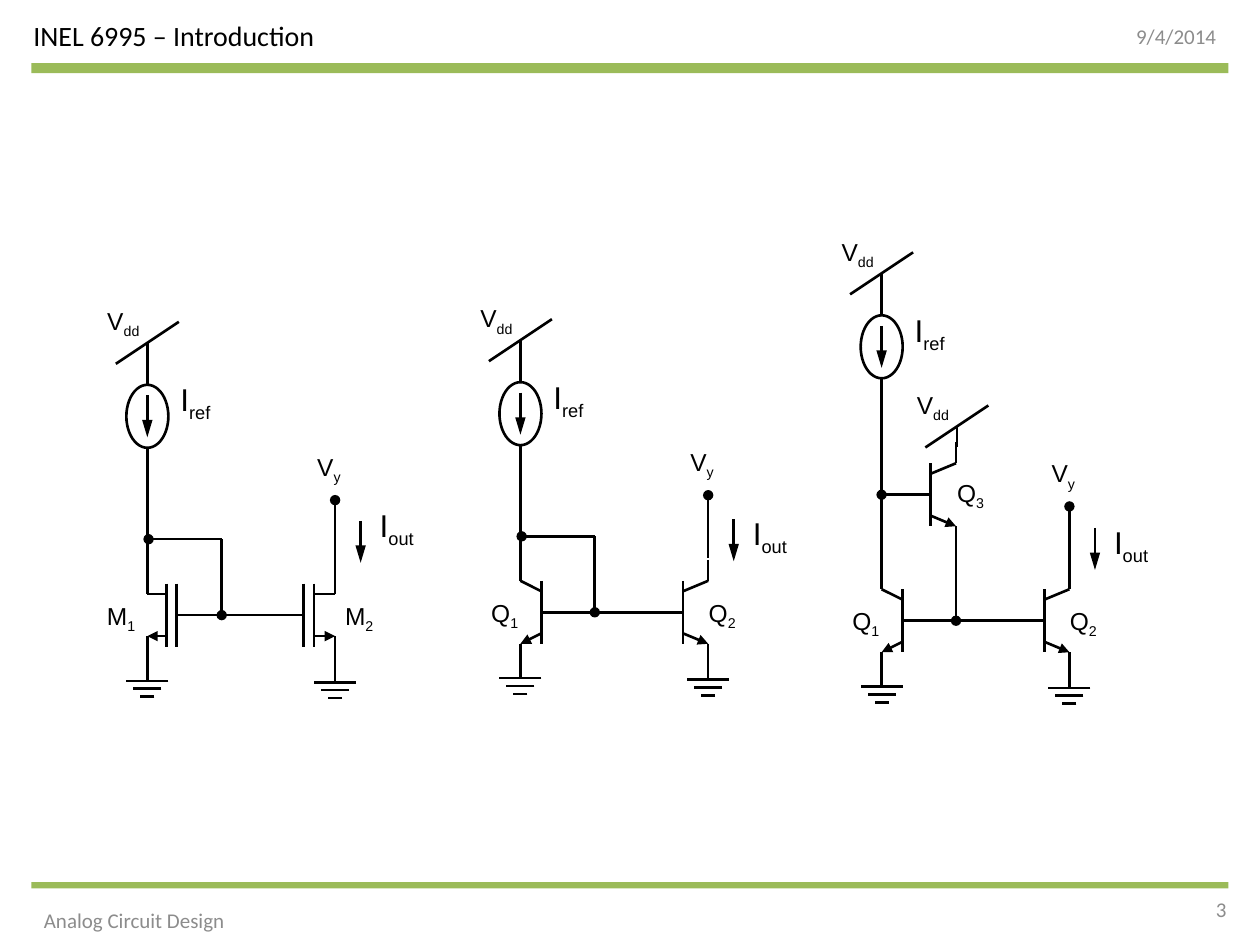
from dataclasses import dataclass
from typing import Optional

from lxml.etree import SubElement
from pptx import Presentation
from pptx.dml.color import RGBColor
from pptx.enum.shapes import MSO_CONNECTOR as Connector, MSO_SHAPE as Shape
from pptx.enum.text import MSO_ANCHOR as Anchor, MSO_AUTO_SIZE as AutoSize, PP_ALIGN as Align
from pptx.oxml.ns import qn
from pptx.util import Pt

BLACK, GREEN, GREY = "000000", "9BBB59", "8C8C8C"
LINE_WIDTH = 1.5
BRANCH_GAP = 107.3  # from the reference branch to the output branch
NODE_OFFSET = 42.5  # from the reference branch to the base node


@dataclass
class Mirror:
    device: str  # "M" for MOSFET, "Q" for bipolar
    x: float
    supply_y: float
    device_y: float
    base_start: float
    output_y: float
    arrow_offset: float
    current_offset: float
    helper: bool = False  # third transistor feeds the bases


@dataclass
class Caption:
    text: str
    x: float
    y: float
    width: float
    size: float
    colour: str
    align: Align


def rgb(colour: str) -> RGBColor:
    return RGBColor.from_string(colour)


def add_bar(shapes, y: float, height: float) -> None:
    bar = shapes.add_shape(Shape.RECTANGLE, Pt(18), Pt(y), Pt(684), Pt(height))
    bar.shadow.inherit = False
    bar.fill.solid()
    bar.fill.fore_color.rgb = rgb(GREEN)
    bar.line.fill.background()


def add_caption(shapes, caption: Caption) -> None:
    box = shapes.add_textbox(Pt(caption.x), Pt(caption.y), Pt(caption.width), Pt(28.8))
    frame = box.text_frame
    frame.word_wrap = True
    frame.vertical_anchor = Anchor.MIDDLE
    paragraph = frame.paragraphs[0]
    paragraph.text = caption.text
    paragraph.alignment = caption.align
    paragraph.font.name = "Calibri"
    paragraph.font.size = Pt(caption.size)
    paragraph.font.color.rgb = rgb(caption.colour)


def add_label(shapes, symbol: str, subscript: str, x: float, y: float,
              width: float = 31.7, size: float = 14) -> None:
    """Symbol with a subscript."""
    box = shapes.add_textbox(Pt(x), Pt(y), Pt(width), Pt(28.8 if size > 14 else 24.5))
    frame = box.text_frame
    frame.word_wrap = False
    frame.auto_size = AutoSize.SHAPE_TO_FIT_TEXT
    paragraph = frame.paragraphs[0]
    paragraph.font.name = "Arial"
    paragraph.font.size = Pt(size)
    paragraph.font.color.rgb = rgb(BLACK)
    paragraph.add_run().text = symbol
    run = paragraph.add_run()
    run.text = subscript
    run._r.get_or_add_rPr().set("baseline", "-25000")


def add_wire(shapes, x1: float, y1: float, x2: float, y2: float,
             start: Optional[str] = None, end: Optional[str] = None,
             length: str = "med") -> None:
    wire = shapes.add_connector(Connector.STRAIGHT, Pt(x1), Pt(y1), Pt(x2), Pt(y2))
    wire.line.width = Pt(LINE_WIDTH)
    wire.line.color.rgb = rgb(BLACK)
    properties = wire._element.spPr
    line = properties.find(qn("a:ln"))
    for tag, mark in (("a:headEnd", start), ("a:tailEnd", end)):
        if mark:
            SubElement(line, qn(tag), type=mark, w="med", len=length)
    SubElement(properties, qn("a:effectLst"))


def add_ground(shapes, x: float, y: float) -> None:
    add_wire(shapes, x, y, x, y + 9)
    for drop, half in ((9, 12), (13.5, 8), (18, 4)):
        add_wire(shapes, x + half, y + drop, x - half, y + drop)


def add_supply(shapes, x: float, y: float) -> None:
    add_wire(shapes, x, y, x, y + 12)
    add_wire(shapes, x + 18, y - 12, x - 18, y + 12)
    add_label(shapes, "V", "dd", x - 30, y - 24.5, 34.6)


def add_current_source(shapes, x: float, y: float) -> None:
    add_wire(shapes, x, y - 12, x, y)
    add_wire(shapes, x, y + 36, x, y + 48)
    circle = shapes.add_shape(Shape.OVAL, Pt(x - 12), Pt(y), Pt(24), Pt(36))
    circle.shadow.inherit = False
    circle.fill.background()
    circle.line.color.rgb = rgb(BLACK)
    circle.line.width = Pt(LINE_WIDTH)
    add_wire(shapes, x, y + 6, x, y + 30, end="triangle", length="lg")
    add_label(shapes, "I", "ref", x + 11.8, y - 6, 33.8, 18)


def add_mosfet(shapes, x: float, y: float, right: bool) -> None:
    """The gate faces right or left of the channel lead at x."""
    channel, gate, lead = (11, 16.6, 33) if right else (-12, -18, -36)
    add_wire(shapes, x, y - 12, x, y + 6)
    add_wire(shapes, x, y + 30, x, y + 48)
    add_wire(shapes, x, y + 6, x + channel, y + 6)
    add_wire(shapes, x, y + 30, x + channel, y + 30, start="triangle")
    for offset in (channel, gate):
        add_wire(shapes, x + offset, y, x + offset, y + 36)
    add_wire(shapes, x + gate, y + 18, x + lead, y + 18)


def add_bipolar(shapes, x: float, y: float, right: bool) -> None:
    """The base faces right or left of the collector lead at x."""
    base, lead = (12, 30) if right else (-14.4, -36)
    add_wire(shapes, x, y - 12, x, y)
    add_wire(shapes, x, y + 36, x, y + 48)
    add_wire(shapes, x, y, x + base, y + 6)
    add_wire(shapes, x, y + 36, x + base, y + 30, start="triangle")
    add_wire(shapes, x + base, y, x + base, y + 36)
    add_wire(shapes, x + base, y + 18, x + lead, y + 18)


def add_mirror(shapes, mirror: Mirror) -> None:
    x, y = mirror.x, mirror.device_y
    output_x, node_x = x + BRANCH_GAP, x + NODE_OFFSET
    base_y = y + 18
    node_y = base_y - 43.4

    # Transistors and grounds
    add_device = add_mosfet if mirror.device == "M" else add_bipolar
    label_offsets = (-30.2, -1.4) if mirror.device == "M" else (-23.8, -6.8)
    for index, branch_x in enumerate((x, output_x)):
        add_device(shapes, branch_x, y, index == 0)
        add_ground(shapes, branch_x, y + 46.6 + 0.8 * index)
        add_label(shapes, mirror.device, str(index + 1),
                  branch_x + label_offsets[index], y + 6.2)

    # Reference branch
    source_y = mirror.supply_y + 24
    add_supply(shapes, x, mirror.supply_y)
    add_current_source(shapes, x, source_y)
    add_wire(shapes, x, source_y + 48, x, y - 11)

    # Base connection
    add_wire(shapes, x + mirror.base_start + 53.3, base_y, x + mirror.base_start, base_y)
    add_wire(shapes, node_x, node_y, node_x, base_y, end="oval")
    if mirror.helper:
        helper_y = y - 72
        add_bipolar(shapes, node_x, helper_y, False)
        add_supply(shapes, node_x + 0.5, helper_y - 21)
        add_wire(shapes, x + 12.4, helper_y + 18, x, helper_y + 18, end="oval")
        add_label(shapes, "Q", "3", node_x - 6.5, helper_y + 5)
    else:
        add_wire(shapes, node_x, node_y, x + 0.7, node_y, end="oval")

    # Output branch
    top, arrow_y = mirror.output_y, mirror.output_y + mirror.arrow_offset
    add_wire(shapes, output_x, top, output_x, top + 36, start="oval")
    add_wire(shapes, output_x + 14.6, arrow_y, output_x + 14.6, arrow_y + 24,
             end="triangle", length="lg")
    add_label(shapes, "I", "out", output_x + 18.4, top + mirror.current_offset, 36.7, 18)
    add_label(shapes, "V", "y", output_x - 17.3, top - 31, 28.8)


CAPTIONS = [
    Caption("INEL 6995 – Introduction", 12, 6, 240, 16, BLACK, Align.LEFT),
    Caption("9/4/2014", 534, 6, 168, 12, GREY, Align.RIGHT),
    Caption("Analog Circuit Design", 18, 511.2, 126, 12, GREY, Align.LEFT),
    Caption("3", 540, 505.2, 168, 12, GREY, Align.RIGHT),
]
MIRRORS = [
    Mirror("M", 84.2, 195.9, 333.5, 32.4, 285.8, 11.8, 0),
    Mirror("Q", 297.4, 194.4, 331.9, 19.4, 283, 13.7, 7.2),
    Mirror("Q", 503.8, 156.2, 336.7, 21.6, 289.4, 12.3, 5.8, helper=True),
]


def main() -> None:
    presentation = Presentation()
    presentation.slide_width, presentation.slide_height = Pt(720), Pt(540)
    slide = presentation.slides.add_slide(presentation.slide_layouts[6])

    # Header and footer
    add_bar(slide.shapes, 36, 5.8)
    add_bar(slide.shapes, 504, 3.6)
    for caption in CAPTIONS:
        add_caption(slide.shapes, caption)

    # One group for each current mirror
    for mirror in MIRRORS:
        add_mirror(slide.shapes.add_group_shape().shapes, mirror)

    presentation.save("out.pptx")


if __name__ == "__main__":
    main()
